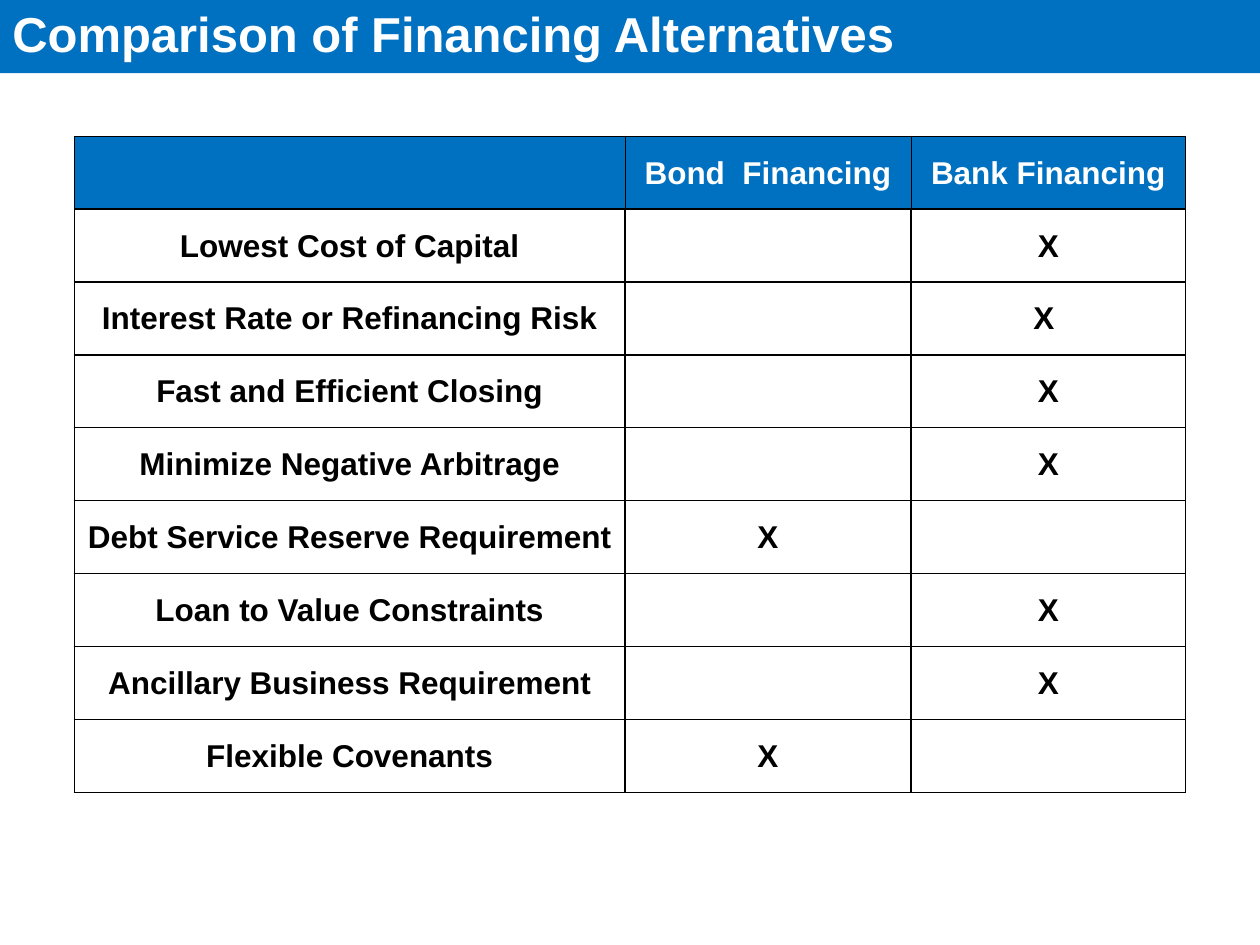
import lxml.etree
import pptx
import pptx.dml.color
import pptx.enum.shapes
import pptx.enum.text
import pptx.oxml.ns
import pptx.util

Inches = pptx.util.Inches
ALIGN = pptx.enum.text.PP_ALIGN
MIDDLE = pptx.enum.text.MSO_ANCHOR.MIDDLE

BLUE, WHITE, BLACK = "0070C0", "FFFFFF", "000000"
TITLE = "Comparison of Financing Alternatives"
COLUMN_WIDTHS = [4.37, 2.27, 2.18]
ROWS = [
    ("", "Bond  Financing", "Bank Financing"),
    ("Lowest Cost of Capital", "", "X"),
    ("Interest Rate or Refinancing Risk", "", "X "),
    ("Fast and Efficient Closing", "", "X"),
    ("Minimize Negative Arbitrage", "", "X"),
    ("Debt Service Reserve Requirement", "X", ""),
    ("Loan to Value Constraints", "", "X"),
    ("Ancillary Business Requirement", "", "X"),
    ("Flexible Covenants", "X", ""),
]


def color(value):
    """Return the colour for a hex string."""
    return pptx.dml.color.RGBColor.from_string(value)


def set_attributes(target, values):
    """Set each attribute in a dict of format values."""
    for name, value in values.items():
        setattr(target, name, value)


def write_text(paragraph, text, size, hex_color, **values):
    """Fill a paragraph with bold Arial text."""
    paragraph.text = text
    set_attributes(paragraph, values)
    font = paragraph.runs[0].font if text else paragraph.font
    set_attributes(font, {"name": "Arial", "size": pptx.util.Pt(size), "bold": True})
    font.color.rgb = color(hex_color)


def set_borders(cell, widths):
    """Draw black cell borders of the given widths in points."""
    qn = pptx.oxml.ns.qn
    properties = cell._tc.get_or_add_tcPr()
    for side, width in zip("LRTB", widths):
        line = lxml.etree.SubElement(properties, qn(f"a:ln{side}"), w=str(pptx.util.Pt(width)))
        fill = lxml.etree.SubElement(line, qn("a:solidFill"))
        lxml.etree.SubElement(fill, qn("a:srgbClr"), val=BLACK)


def add_title_bar(slide, left, top, width, height):
    """Add the full-width title bar."""
    shape = slide.shapes.add_shape(
        pptx.enum.shapes.MSO_SHAPE.RECTANGLE,
        Inches(left), Inches(top), Inches(width), Inches(height))
    shape.shadow.inherit = False
    shape.fill.solid()
    shape.fill.fore_color.rgb = color(BLUE)
    shape.line.fill.background()
    set_attributes(shape.text_frame, {"word_wrap": True, "vertical_anchor": MIDDLE})
    write_text(shape.text_frame.paragraphs[0], TITLE, 28, WHITE,
               alignment=ALIGN.LEFT, line_spacing=0.9)


def format_cell(cell, text, is_header):
    """Write one cell with its borders and fill."""
    set_attributes(cell, {
        "margin_left": Inches(0.01), "margin_right": Inches(0.01),
        "margin_top": Inches(0.01), "margin_bottom": 0,
        "vertical_anchor": MIDDLE})
    write_text(cell.text_frame.paragraphs[0], text, 18,
               WHITE if is_header else BLACK, alignment=ALIGN.CENTER)
    set_borders(cell, (0.5, 0.5, 0.5, 1) if is_header else (1, 1, 1, 1))
    if is_header:
        cell.fill.solid()
        cell.fill.fore_color.rgb = color(BLUE)
    else:
        cell.fill.background()


def add_comparison_table(slide, left, top, width, height):
    """Add the table that compares bond and bank financing."""
    table = slide.shapes.add_table(
        len(ROWS), len(COLUMN_WIDTHS),
        Inches(left), Inches(top), Inches(width), Inches(height)).table
    set_attributes(table, {"first_row": False, "horz_banding": False})
    for column, column_width in zip(table.columns, COLUMN_WIDTHS):
        column.width = Inches(column_width)
    for row_index, texts in enumerate(ROWS):
        for column_index, text in enumerate(texts):
            format_cell(table.cell(row_index, column_index), text, row_index == 0)


def main():
    """Build and save the presentation."""
    presentation = pptx.Presentation()
    set_attributes(presentation, {"slide_width": Inches(10), "slide_height": Inches(7.5)})
    slide = presentation.slides.add_slide(presentation.slide_layouts[6])
    add_title_bar(slide, 0, 0, 10, 0.58)
    add_comparison_table(slide, 0.59, 1.08, sum(COLUMN_WIDTHS), 5.21)
    presentation.save("out.pptx")


if __name__ == "__main__":
    main()
